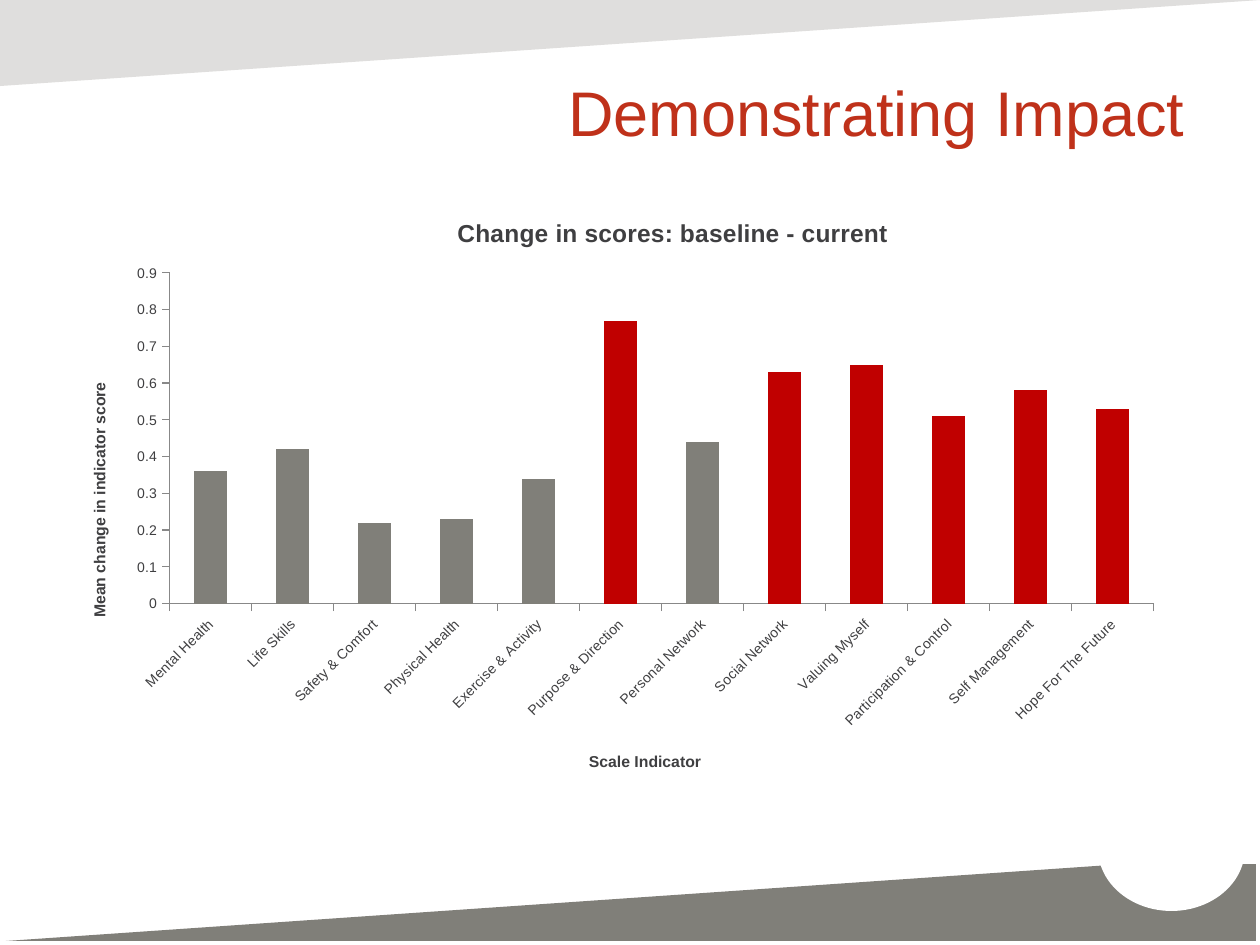
from lxml import etree
from pptx import Presentation, util as u
from pptx.chart.data import CategoryChartData
from pptx.dml.color import RGBColor
from pptx.enum import chart as ch, shapes, text
from pptx.oxml.ns import qn

GRAY = RGBColor(0x80, 0x7F, 0x79)
RED = RGBColor(0xC0, 0x00, 0x00)
RUST = RGBColor(0xBF, 0x31, 0x1A)
INK = RGBColor(0x3F, 0x3F, 0x41)
LINE = RGBColor(0x88, 0x88, 0x88)
PINK = RGBColor(0xF1, 0xA4, 0x98)
WHITE = RGBColor(0xFF, 0xFF, 0xFF)
FONT = "Arial"

CATS = ["Mental Health", "Life Skills", "Safety & Comfort", "Physical Health",
        "Exercise & Activity", "Purpose & Direction", "Personal Network",
        "Social Network", "Valuing Myself", "Participation & Control",
        "Self Management", "Hope For The Future"]
SERIES = [
    ("Series 1", RED, [0, 0, 0, 0, 0, 0.77, 0, 0, 0, 0, 0, 0]),
    ("Series 2", GRAY, [0, 0, 0.22, 0, 0, 0, 0, 0, 0, 0, 0, 0]),
    ("Series 3", PINK, [0.36, 0.42, 0, 0.23, 0.34, 0, 0.44,
                        0.63, 0.65, 0.51, 0.58, 0.53]),
]
HIGH = 0.5  # bars above this score are red


def px(n):
    return u.Emu(round(n * 914400 / 126))


def box(*sides):
    return [px(n) for n in sides]


def style(font, size, color, bold=False):
    font.name, font.size, font.bold = FONT, u.Pt(size), bold
    font.color.rgb = color


def add_fill(slide, kind, sides, color, alpha=None):
    shape = slide.shapes.add_shape(kind, *box(*sides))
    shape.shadow.inherit = False
    shape.fill.solid()
    shape.fill.fore_color.rgb = color
    shape.line.fill.background()
    if alpha is not None:
        tint = shape._element.spPr.find(qn("a:solidFill"))[0]
        etree.SubElement(tint, qn("a:alpha")).set("val", str(alpha * 1000))
    return shape


def add_wedge(slide, sides, alpha=None):
    wedge = add_fill(slide, shapes.MSO_SHAPE.ISOSCELES_TRIANGLE, sides, GRAY, alpha)
    wedge.adjustments[0] = 1
    return wedge


def add_title(slide, words, sides):
    frame = slide.shapes.add_textbox(*box(*sides)).text_frame
    frame.word_wrap = True
    frame.vertical_anchor = text.MSO_ANCHOR.MIDDLE
    frame.text = words
    para = frame.paragraphs[0]
    para.alignment = text.PP_ALIGN.RIGHT
    style(para.runs[0].font, 36, RUST)


def place(part, inner=False, **sides):
    """Fix a chart part at fractions of the chart's size."""
    layout = part.find(qn("c:layout"))
    if layout is None:
        layout = etree.Element(qn("c:layout"))
        rich = part.find(qn("c:tx"))
        if rich is None:
            part.insert(0, layout)
        else:
            rich.addnext(layout)
    for old in list(layout):
        layout.remove(old)
    manual = etree.SubElement(layout, qn("c:manualLayout"))
    if inner:
        etree.SubElement(manual, qn("c:layoutTarget")).set("val", "inner")
    for key in ("x", "y"):
        etree.SubElement(manual, qn(f"c:{key}Mode")).set("val", "edge")
    for key, part_size in sides.items():
        etree.SubElement(manual, qn(f"c:{key}")).set("val", str(part_size))


def set_label(title, words, size, x, y):
    title.text_frame.text = words
    style(title.text_frame.paragraphs[0].runs[0].font, size, INK, True)
    place(title._element, x=x, y=y)


def set_axis(axis, words, x, y):
    axis.has_major_gridlines = False
    axis.major_tick_mark = ch.XL_TICK_MARK.OUTSIDE
    axis.format.line.color.rgb = LINE
    axis.format.line.width = u.Pt(0.75)
    style(axis.tick_labels.font, 8, INK)
    set_label(axis.axis_title, words, 9, x, y)


def paint(thing, color):
    thing.format.fill.solid()
    thing.format.fill.fore_color.rgb = color


def add_bars(slide, sides):
    data = CategoryChartData()
    data.categories = CATS
    for name, _, vals in SERIES:
        data.add_series(name, vals)
    chart = slide.shapes.add_chart(
        ch.XL_CHART_TYPE.COLUMN_STACKED, *box(*sides), data).chart
    style(chart.font, 10, INK)
    chart.has_legend = False
    set_label(chart.chart_title, "Change in scores: baseline - current", 14, 0.35, 0.03)
    chart.chart_title.include_in_layout = False

    # Axes
    set_axis(chart.category_axis, "Scale Indicator", 0.47, 0.93)
    chart.category_axis._element.txPr.find(qn("a:bodyPr")).set("rot", "-2700000")
    axis = chart.value_axis
    set_axis(axis, "Mean change in indicator score", 0.02, 0.31)
    axis.axis_title.text_frame._txBody.find(qn("a:bodyPr")).set("rot", "-5400000")
    axis.minimum_scale, axis.maximum_scale, axis.major_unit = 0, 0.9, 0.1
    axis.tick_labels.number_format = "General"
    axis.tick_labels.number_format_is_linked = False

    # Bars
    plot = chart.plots[0]
    plot.gap_width, plot.overlap = 150, 100
    plot.vary_by_categories = False
    for bars, (_, color, _) in zip(plot.series, SERIES):
        paint(bars, color)
    last = plot.series[-1]
    for i, val in enumerate(SERIES[-1][2]):
        if val:
            paint(last.points[i], RED if val > HIGH else GRAY)
    area = chart._chartSpace.chart.plotArea
    place(area, inner=True, x=0.095, y=0.131, w=0.886, h=0.556)


def main():
    deck = Presentation()
    deck.slide_width, deck.slide_height = px(1260), px(945)
    slide = deck.slides.add_slide(deck.slide_layouts[6])

    # Bottom wedge with its round cut-out
    add_wedge(slide, (6, 855, 1250, 86))
    add_fill(slide, shapes.MSO_SHAPE.OVAL, (1098, 786, 147, 125), WHITE)
    add_fill(slide, shapes.MSO_SHAPE.RECTANGLE, (1172, 786, 88, 78), WHITE)

    # Top wedge
    add_wedge(slide, (0, 0, 1260, 86), alpha=25).rotation = 180

    # Content
    add_title(slide, "Demonstrating Impact", (282, 67, 915, 88))
    add_bars(slide, (64, 195, 1111, 595))
    deck.save("out.pptx")


if __name__ == "__main__":
    main()
